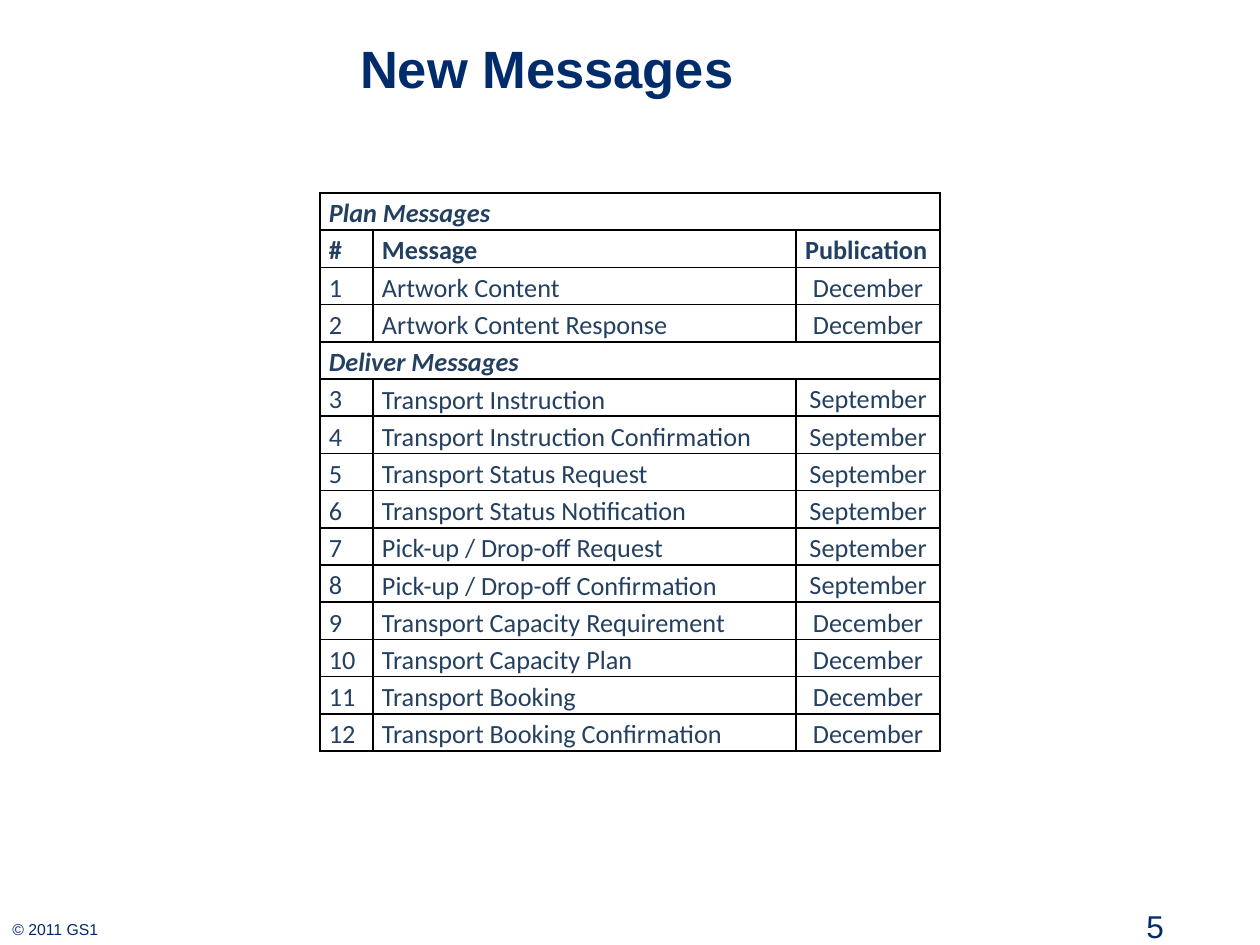
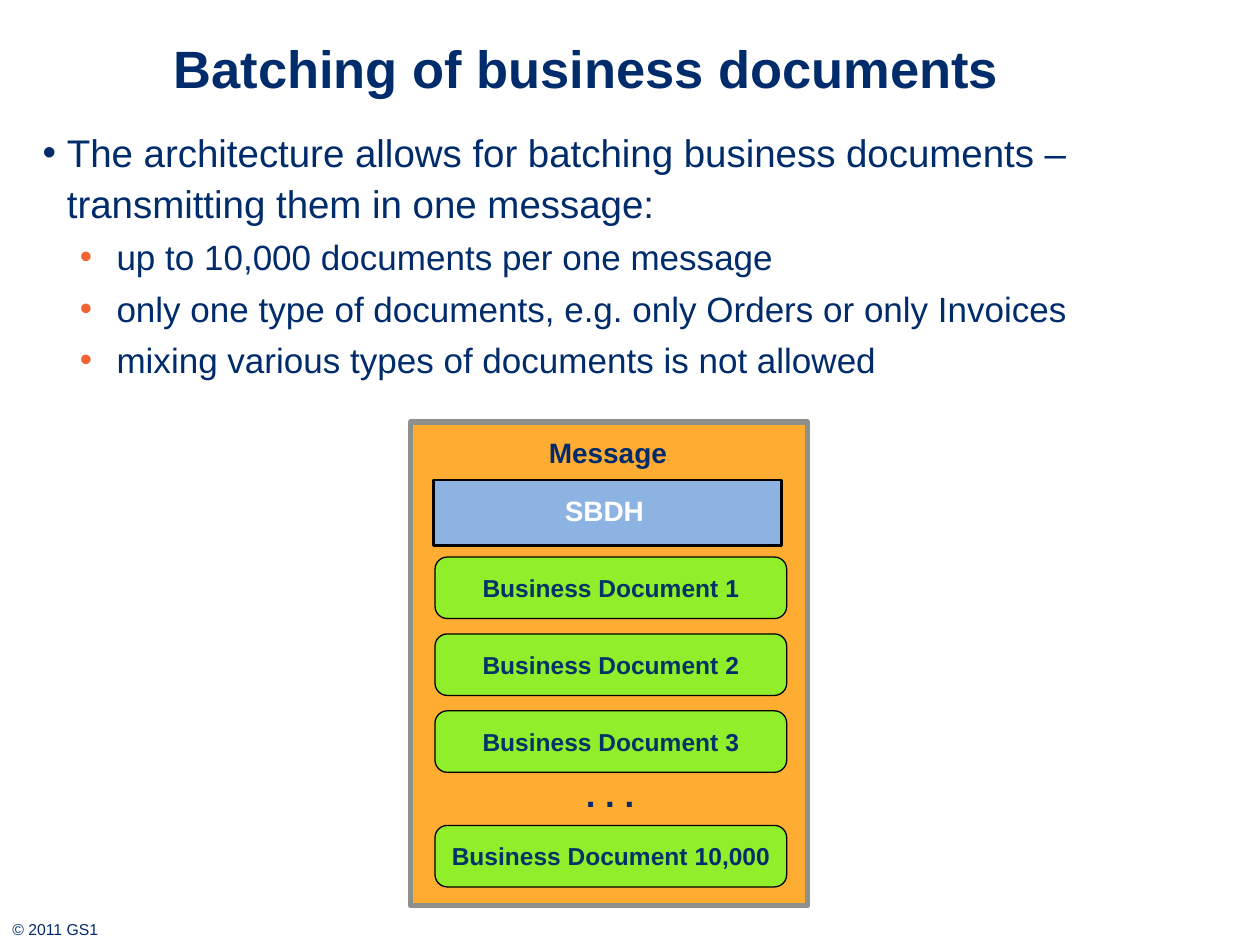
from lxml import etree
from pptx import Presentation
from pptx.dml.color import RGBColor
from pptx.enum import shapes, text
from pptx.oxml.ns import qn
from pptx.util import Cm, Pt

COLORS = {
    "navy": "002C6C", "table_text": "244061", "document_text": "003366",
    "black": "000000", "white": "FFFFFF", "bullet": "F26334",
    "panel": "FFAC33", "panel_line": "8E918B",
    "header": "8DB3E2", "document": "91EE2A",
}
LEFT, CENTER = text.PP_ALIGN.LEFT, text.PP_ALIGN.CENTER
TOP, MIDDLE, BOTTOM = (text.MSO_ANCHOR.TOP, text.MSO_ANCHOR.MIDDLE,
                       text.MSO_ANCHOR.BOTTOM)

PLAN_MESSAGES = ["Artwork Content", "Artwork Content Response"]
DELIVER_MESSAGES = [
    "Transport Instruction", "Transport Instruction Confirmation",
    "Transport Status Request", "Transport Status Notification",
    "Pick-up / Drop-off Request", "Pick-up / Drop-off Confirmation",
    "Transport Capacity Requirement", "Transport Capacity Plan",
    "Transport Booking", "Transport Booking Confirmation",
]
SEPTEMBER_COUNT = 6  # the first deliver messages; the others follow in December


def rgb(name):
    return RGBColor.from_string(COLORS[name])


def add_span(para, words, size=18, color="navy", font="Arial",
             bold=False, italic=False):
    span = para.add_run()
    span.text = words
    span.font.name, span.font.size = font, Pt(size)
    span.font.bold, span.font.italic = bold, italic
    span.font.color.rgb = rgb(color)


def write(frame, words, align=LEFT, anchor=TOP, spacing=None, **style):
    """Fill the first paragraph of a text frame and return it."""
    frame.word_wrap = True
    frame.vertical_anchor = anchor
    para = frame.paragraphs[0]
    para.alignment = align
    if spacing:
        para.line_spacing = spacing
    add_span(para, words, **style)
    return para


def add_text(parent, box, words, inset=True, **style):
    frame = parent.shapes.add_textbox(*map(Cm, box)).text_frame
    if not inset:
        clear_margins(frame)
    write(frame, words, **style)
    return frame


def clear_margins(frame):
    frame.margin_left = frame.margin_right = 0
    frame.margin_top = frame.margin_bottom = 0


def add_block(parent, kind, box, fill, line, width):
    block = parent.shapes.add_shape(kind, *map(Cm, box))
    block.shadow.inherit = False
    block.fill.solid()
    block.fill.fore_color.rgb = rgb(fill)
    block.line.color.rgb = rgb(line)
    block.line.width = Pt(width)
    clear_margins(block.text_frame)
    return block


def add_bullet(para, color, left, hanging):
    props = para._p.get_or_add_pPr()
    props.set("marL", str(Cm(left)))
    props.set("indent", str(-Cm(hanging)))
    tint = etree.SubElement(props, qn("a:buClr"))
    etree.SubElement(tint, qn("a:srgbClr"), val=COLORS[color])
    etree.SubElement(props, qn("a:buFont"), typeface="Arial")
    etree.SubElement(props, qn("a:buChar"), char="•")


def add_borders(cell):
    props = cell._tc.get_or_add_tcPr()
    for index, side in enumerate(("lnL", "lnR", "lnT", "lnB")):
        line = etree.Element(qn(f"a:{side}"), w=str(Pt(1)))
        fill = etree.SubElement(line, qn("a:solidFill"))
        etree.SubElement(fill, qn("a:srgbClr"), val=COLORS["black"])
        props.insert(index, line)


def add_page(deck, title, left, width):
    """Blank page with the shared title and copyright line."""
    page = deck.slides.add_slide(deck.slide_layouts[6])
    add_text(page, (0, 18.42, 6.17, 0.64), "© 2011 GS1", size=9)
    add_text(page, (left, 0.3, width, 2.11), title, anchor=MIDDLE,
             size=30, bold=True)
    return page


def message_rows():
    """Yield the cell texts of each row with the row's text style."""
    plain, heading = {}, {"bold": True, "italic": True}
    yield ["Plan Messages"], heading
    yield ["#", "Message", "Publication"], {"bold": True}
    for number, name in enumerate(PLAN_MESSAGES, 1):
        yield [str(number), name, "December"], plain
    yield ["Deliver Messages"], heading
    for index, name in enumerate(DELIVER_MESSAGES):
        month = "September" if index < SEPTEMBER_COUNT else "December"
        yield [str(index + 1 + len(PLAN_MESSAGES)), name, month], plain


def add_message_table(page, left, top):
    widths, row_height = (1.07, 8.53, 2.9), 0.75
    rows = list(message_rows())
    frame = page.shapes.add_table(
        len(rows), len(widths), Cm(left), Cm(top),
        Cm(sum(widths)), Cm(row_height * len(rows)))
    table = frame.table
    table.first_row = table.horz_banding = False
    for column, width in zip(table.columns, widths):
        column.width = Cm(width)

    for row, (words, style) in enumerate(rows):
        table.rows[row].height = Cm(row_height)
        for column in range(len(widths)):
            cell = table.cell(row, column)
            cell.fill.background()
            add_borders(cell)
            cell.margin_left = cell.margin_right = Cm(0.18)
            cell.margin_top = cell.margin_bottom = 0
            if column < len(words):
                is_data = not style
                write(cell.text_frame, words[column], spacing=1.15,
                      align=CENTER if is_data and column == 2 else LEFT,
                      size=15, font="Calibri", color="table_text", **style)
                cell.vertical_anchor = (TOP, BOTTOM, MIDDLE)[column] if is_data else TOP
        if len(words) == 1:
            table.cell(row, 0).merge(table.cell(row, len(widths) - 1))


def add_batching_points(page, box):
    points = [
        "up to 10,000 documents per one message",
        "only one type of documents, e.g. only Orders or only Invoices",
        "mixing various types of documents is not allowed",
    ]
    frame = add_text(
        page, box, "The architecture allows for batching business documents – "
        "transmitting them in one message:", size=22, spacing=1.1)
    add_bullet(frame.paragraphs[0], "navy", 0.49, 0.49)
    for point in points:
        para = frame.add_paragraph()
        para.level = 1
        para.line_spacing, para.space_before = 1.1, Pt(3)
        add_bullet(para, "bullet", 1.49, 0.74)
        add_span(para, point, size=20)


def add_message_diagram(page, left, top, width, height):
    group = page.shapes.add_group_shape()
    rectangle = shapes.MSO_SHAPE.RECTANGLE
    label = {"align": CENTER, "bold": True}

    # Message panel and its header
    add_block(group, rectangle, (left, top, width, height),
              "panel", "panel_line", 3)
    add_text(group, (left, top + 0.28, width - 0.05, 0.76), "Message",
             inset=False, size=16, **label)
    header = add_block(group, rectangle, (left + 0.46, top + 1.17, 7.01, 1.32),
                       "header", "black", 1.5)
    header.text_frame.margin_right = header.text_frame.margin_bottom = Cm(0.12)
    write(header.text_frame, "SBDH", anchor=MIDDLE, size=16, color="white", **label)

    # Business documents, with a gap before the last one
    first, step, last = 2.72, 1.55, 8.13
    offsets = [first + step * index for index in range(3)] + [last]
    for number, offset in zip(("1", "2", "3", "10,000"), offsets):
        document = add_block(group, shapes.MSO_SHAPE.ROUNDED_RECTANGLE,
                             (left + 0.49, top + offset, 7.09, 1.24),
                             "document", "black", 0.75)
        document.adjustments[0] = 0.2
        para = write(document.text_frame, "Business Document", anchor=MIDDLE,
                     size=14, color="document_text", **label)
        add_span(para, f" {number}", size=14, bold=True)
    add_text(group, (left + 0.49, top + 6.93, 7.06, 1.24), ". . .",
             size=20, **label)


def build_new_messages(deck):
    page = add_page(deck, "New Messages", 7.01, 16.59)
    add_text(page, (22.86, 18.16, 2.54, 0.89), "5")
    add_message_table(page, 6.45, 3.89)


def build_batching(deck):
    page = add_page(deck, "Batching of business documents", 3.25, 22.15)
    add_batching_points(page, (0.61, 2.39, 24.79, 8.79))
    add_message_diagram(page, 8.28, 8.51, 8, 9.75)


def main():
    deck = Presentation()
    deck.slide_width, deck.slide_height = Cm(25.4), Cm(19.05)
    build_new_messages(deck)
    build_batching(deck)
    deck.save("out.pptx")


if __name__ == "__main__":
    main()
